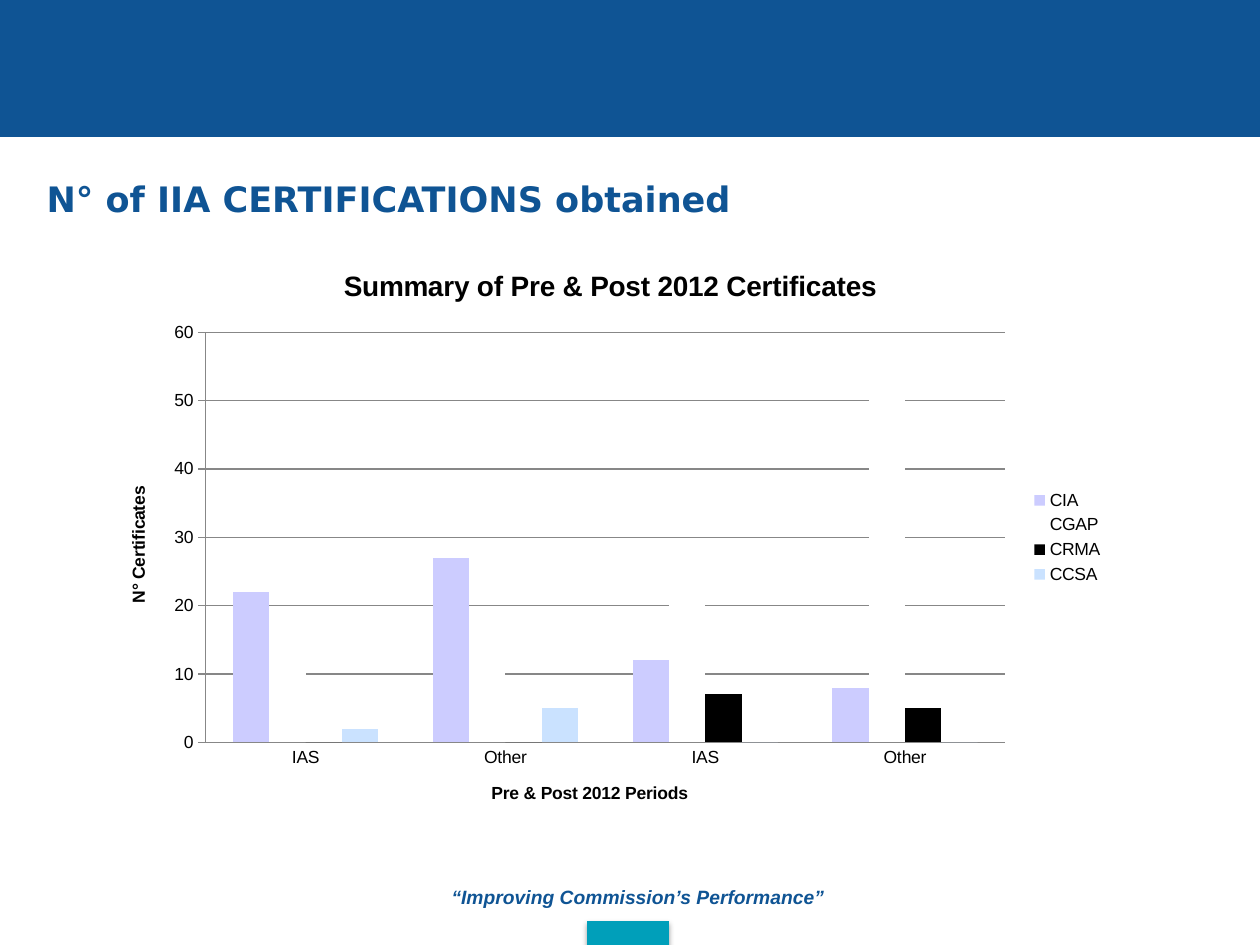
import pptx
import pptx.chart.data
import pptx.dml.color
import pptx.enum.chart
import pptx.enum.shapes
import pptx.enum.text
import pptx.oxml
import pptx.oxml.ns
import pptx.util
from pptx.util import Inches

COLOURS = {
    "blue": "0F5494", "teal": "009FBA", "black": "000000", "grid": "878787",
    "": "99CCFF", "CIA": "CCCCFF", "CGAP": "FFFFFF", "CRMA": "000000",
    "CCSA": "CAE2FF",
}
CERTIFICATES = {
    "": (),
    "CIA": (22, 27, 12, 8),
    "CGAP": (12, 14, 27, 54),
    "CRMA": (0, 0, 7, 5),
    "CCSA": (2, 5, 0, 0),
}


def colour(name):
    return pptx.dml.color.RGBColor.from_string(COLOURS[name])


def write(frame, text, *, size, name="Arial", fill="black", bold=True,
          italic=False, align=None):
    para = frame.paragraphs[0]
    para.alignment = align
    span = para.add_run()
    span.text = text
    span.font.size = pptx.util.Pt(size)
    span.font.name = name
    span.font.bold = bold
    span.font.italic = italic
    span.font.color.rgb = colour(fill)


deck = pptx.Presentation()
deck.slide_width, deck.slide_height = Inches(10), Inches(7.5)
page = deck.slides.add_slide(deck.slide_layouts[5])

# Header band and footer tab
for name, bounds in (("blue", (0, 0, 10, 1.08)), ("teal", (4.66, 7.31, 0.65, 0.22))):
    block = page.shapes.add_shape(
        pptx.enum.shapes.MSO_SHAPE.RECTANGLE, *map(Inches, bounds))
    block.shadow.inherit = False
    block.fill.solid()
    block.fill.fore_color.rgb = colour(name)
    if name == "blue":
        block.line.color.rgb = colour(name)
        block.line.width = pptx.util.Pt(0.75)
    else:
        block.line.fill.background()

tab_effects = block._element.spPr.find(pptx.oxml.ns.qn("a:effectLst"))
tab_effects.append(pptx.oxml.parse_xml(
    f'<a:outerShdw {pptx.oxml.ns.nsdecls("a")} blurRad="39370" dist="22860" '
    'dir="5400000" rotWithShape="0"><a:srgbClr val="000000">'
    '<a:alpha val="35000"/></a:srgbClr></a:outerShdw>'))

# Title and motto
title = page.shapes.title
title.left, title.top = Inches(0.27), Inches(1.38)
title.width, title.height = Inches(7.88), Inches(0.39)
title.text_frame.vertical_anchor = pptx.enum.text.MSO_ANCHOR.MIDDLE
write(title.text_frame, "N° of IIA CERTIFICATIONS obtained", size=20,
      name="DejaVu Sans", fill="blue", align=pptx.enum.text.PP_ALIGN.LEFT)

motto = page.shapes.add_textbox(Inches(2.98), Inches(6.98), Inches(4.17), Inches(0.29))
motto.text_frame.word_wrap = True
write(motto.text_frame, "“Improving Commission’s Performance”", size=11,
      fill="blue", italic=True, align=pptx.enum.text.PP_ALIGN.CENTER)

# Chart
data = pptx.chart.data.CategoryChartData()
data.categories = ["IAS", "Other", "IAS", "Other"]
for name, values in CERTIFICATES.items():
    data.add_series(name, values)
chart = page.shapes.add_chart(
    pptx.enum.chart.XL_CHART_TYPE.COLUMN_CLUSTERED, Inches(0.83), Inches(1.94),
    Inches(8.03), Inches(4.65), data).chart
chart.font.size = pptx.util.Pt(10)
chart.font.name = "Arial"
chart.font.color.rgb = colour("black")
chart.has_title = True
write(chart.chart_title.text_frame, "Summary of Pre & Post 2012 Certificates", size=16)
chart.chart_title.include_in_layout = False
chart.has_legend = True
chart.legend.position = pptx.enum.chart.XL_LEGEND_POSITION.RIGHT
chart.legend.include_in_layout = False

plot = chart.plots[0]
plot.gap_width = 150
plot.overlap = 0
plot.vary_by_categories = False
for series in plot.series:
    series.format.fill.solid()
    series.format.fill.fore_color.rgb = colour(series.name)
    series.format.line.fill.background()
    if not CERTIFICATES[series.name]:
        # Without a value element the empty series takes no room in a group
        series._element.remove(series._element.find(pptx.oxml.ns.qn("c:val")))

tick_marks = pptx.enum.chart.XL_TICK_MARK
for axis, text, tick in (
    (chart.category_axis, "Pre & Post 2012 Periods", tick_marks.NONE),
    (chart.value_axis, "N° Certificates", tick_marks.OUTSIDE),
):
    write(axis.axis_title.text_frame, text, size=10)
    axis.major_tick_mark = tick
    axis.minor_tick_mark = tick_marks.NONE
    axis.format.line.color.rgb = colour("grid")
    axis.format.line.width = pptx.util.Pt(0.75)
chart.value_axis.minimum_scale = 0
chart.value_axis.maximum_scale = 60
chart.value_axis.major_unit = 10
grid_line = chart.value_axis.major_gridlines.format.line
grid_line.color.rgb = colour("grid")
grid_line.width = pptx.util.Pt(0.75)

# Fixed plot area, as fractions of the chart
plot_area = chart._chartSpace.chart.plotArea
for old_layout in plot_area.findall(pptx.oxml.ns.qn("c:layout")):
    plot_area.remove(old_layout)
plot_area.insert(0, pptx.oxml.parse_xml(
    f'<c:layout {pptx.oxml.ns.nsdecls("c")}><c:manualLayout>'
    '<c:layoutTarget val="inner"/><c:xMode val="edge"/><c:yMode val="edge"/>'
    '<c:x val="0.1"/><c:y val="0.15"/><c:w val="0.79"/><c:h val="0.7"/>'
    '</c:manualLayout></c:layout>'))

deck.save("out.pptx")
